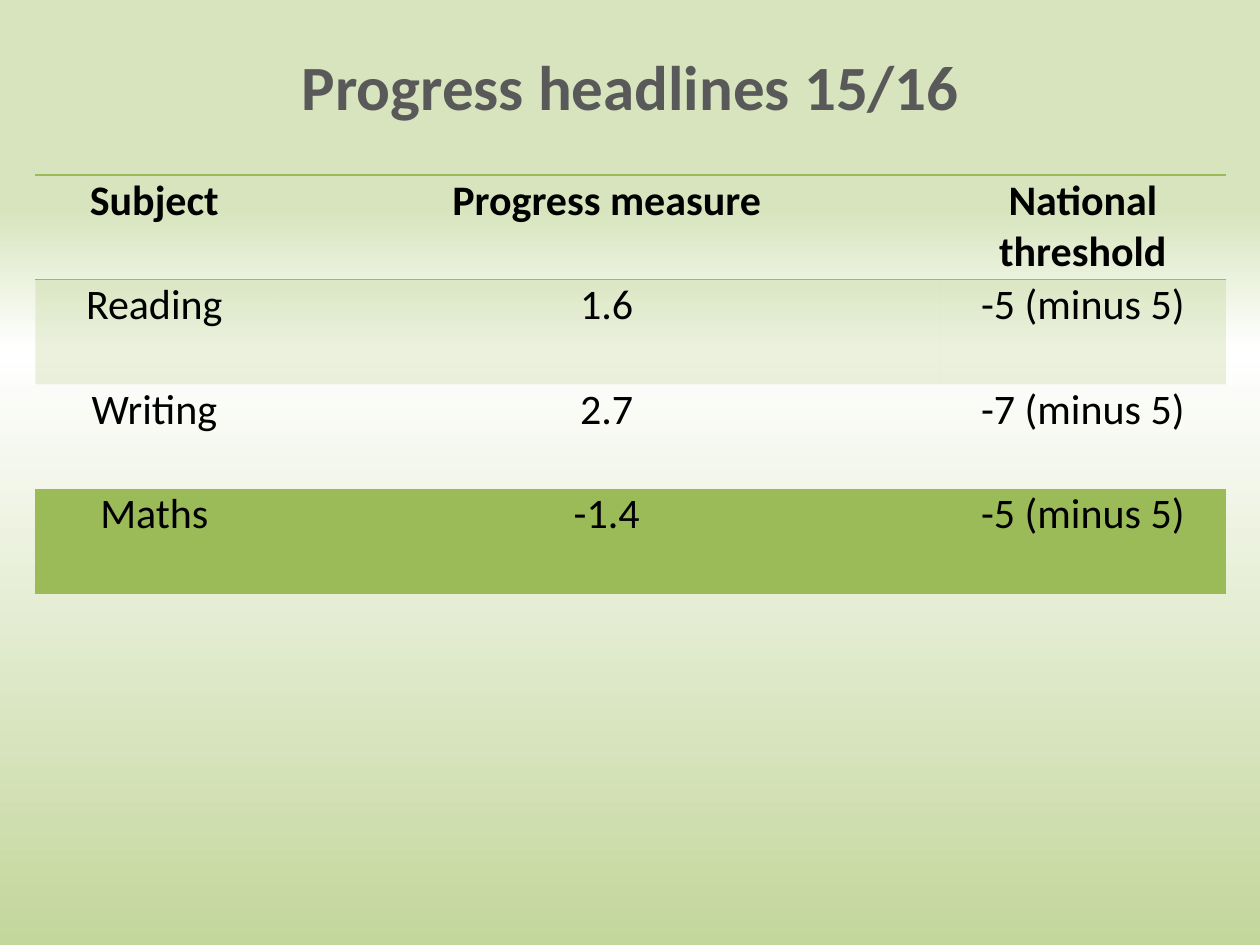
"""Build the progress headlines slide."""
from copy import deepcopy

from lxml.etree import SubElement
from pptx import Presentation
from pptx.dml.color import RGBColor
from pptx.enum.text import MSO_ANCHOR, PP_ALIGN
from pptx.oxml.ns import qn
from pptx.util import Inches, Pt

FONT = "Calibri"
TITLE_GREY = RGBColor(0x59, 0x59, 0x59)
BLACK = RGBColor(0, 0, 0)
GREEN = RGBColor(0x9B, 0xBB, 0x59)
PALE_GREEN = RGBColor(0xD7, 0xE4, 0xBD)
WHITE = RGBColor(0xFF, 0xFF, 0xFF)
SOFT_GREEN = RGBColor(0xC3, 0xD6, 0x9B)

BACKGROUND_STOPS = [(0.22, PALE_GREEN), (0.37, WHITE), (1, SOFT_GREEN)]
NO_STYLE_NO_GRID = "{2D5ABB26-0587-4C30-8999-92F81FD0307C}"
LEFT, WIDTH = 0.28, 9.45
COLUMN_WIDTHS = [1.89, 5.29, 2.27]
ROW_HEIGHT = 0.83
ROWS = [
    ["Subject", "Progress measure", "National threshold"],
    ["Reading", "1.6", "-5 (minus 5)"],
    ["Writing", "2.7", "-7 (minus 5)"],
    ["Maths", "-1.4", "-5 (minus 5)"],
]


def paint_background(page):
    """Fill the page with a three-stop vertical gradient."""
    fill = page.background.fill
    fill.gradient()
    fill.gradient_angle = 270
    stop_list = page.element.find(".//" + qn("a:gsLst"))
    stop_list.append(deepcopy(stop_list[-1]))
    for stop, (position, color) in zip(fill.gradient_stops, BACKGROUND_STOPS):
        stop.position = position
        stop.color.rgb = color


def write_centred(frame, text, size, color, bold):
    """Write one centred paragraph into a text frame."""
    frame.word_wrap = True
    para = frame.paragraphs[0]
    para.alignment = PP_ALIGN.CENTER
    span = para.add_run()
    span.text = text
    span.font.name = FONT
    span.font.size = Pt(size)
    span.font.bold = bold
    span.font.color.rgb = color


def add_title(page, text):
    """Add the slide heading."""
    box = page.shapes.add_textbox(Inches(LEFT), Inches(0.13), Inches(WIDTH), Inches(1.1))
    box.text_frame.vertical_anchor = MSO_ANCHOR.MIDDLE
    write_centred(box.text_frame, text, 36, TITLE_GREY, True)


def add_border(cell, side):
    """Draw a green rule on one side of a cell."""
    properties = cell._tc.get_or_add_tcPr()
    line = SubElement(properties, qn(f"a:ln{side}"), w=str(Pt(1)))
    solid = SubElement(line, qn("a:solidFill"))
    SubElement(solid, qn("a:srgbClr"), val=str(GREEN))


def fill_cell(cell, banded):
    """Give a cell a translucent green band or no fill."""
    if not banded:
        cell.fill.background()
        return
    cell.fill.solid()
    cell.fill.fore_color.rgb = GREEN
    color = cell._tc.tcPr.find(".//" + qn("a:srgbClr"))
    SubElement(color, qn("a:alpha"), val="20000")


def add_progress_table(page):
    """Add the table of progress measures by subject."""
    frame = page.shapes.add_table(
        len(ROWS), len(COLUMN_WIDTHS), Inches(LEFT), Inches(1.39),
        Inches(WIDTH), Inches(ROW_HEIGHT * len(ROWS)))
    table = frame.table
    table.horz_banding = False
    table._tbl.tblPr.find(qn("a:tableStyleId")).text = NO_STYLE_NO_GRID
    for column, width in zip(table.columns, COLUMN_WIDTHS):
        column.width = Inches(width)
    for index, texts in enumerate(ROWS):
        table.rows[index].height = Inches(ROW_HEIGHT)
        header = index == 0
        for cell, text in zip(table.rows[index].cells, texts):
            cell.margin_left = cell.margin_right = Inches(0.07)
            cell.margin_top = cell.margin_bottom = 0
            write_centred(cell.text_frame, text, 24, BLACK, header)
            if header:
                add_border(cell, "T")
            if header or index == len(ROWS) - 1:
                add_border(cell, "B")
            fill_cell(cell, index % 2 == 1)


def main():
    """Create and save the deck."""
    deck = Presentation()
    deck.slide_width, deck.slide_height = Inches(10), Inches(7.5)
    page = deck.slides.add_slide(deck.slide_layouts[6])
    paint_background(page)
    add_title(page, "Progress headlines 15/16")
    add_progress_table(page)
    deck.save("out.pptx")


if __name__ == "__main__":
    main()
